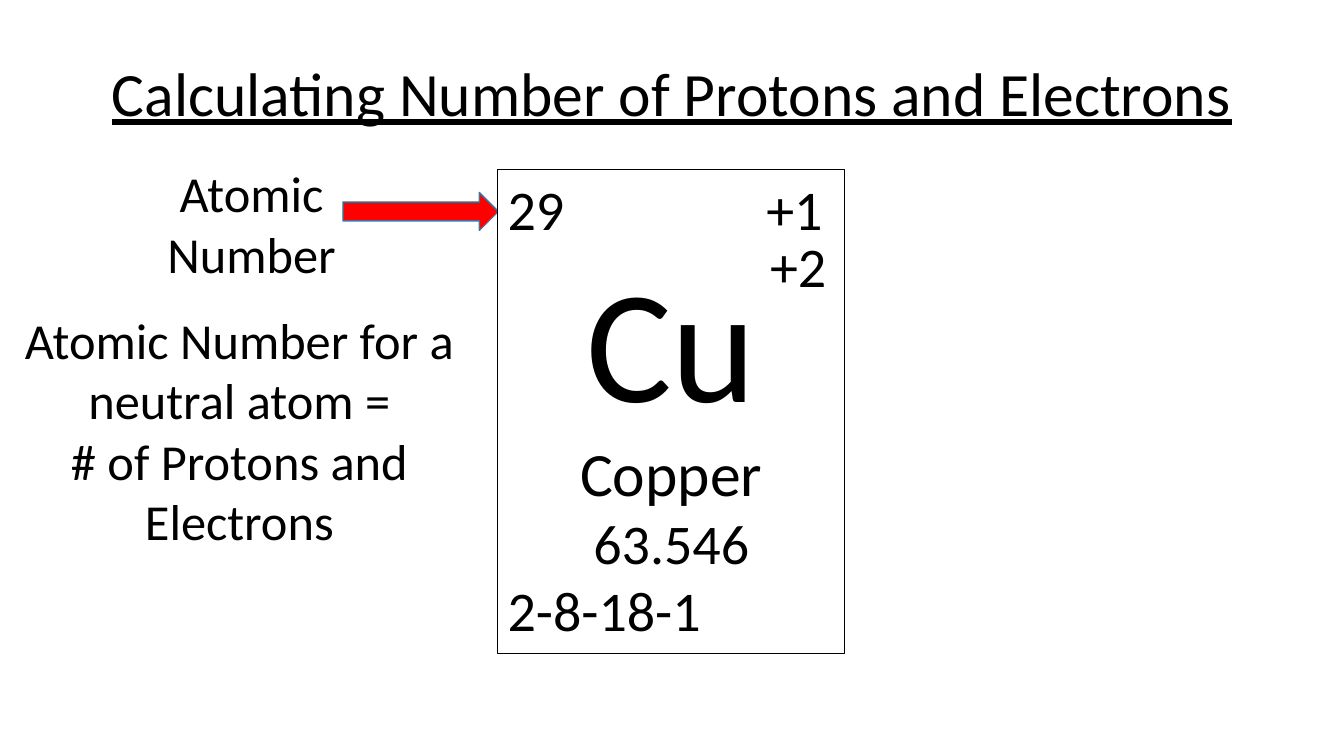
from lxml import etree
from pptx import Presentation
from pptx.dml.color import RGBColor
from pptx.enum.shapes import MSO_SHAPE
from pptx.enum.text import MSO_ANCHOR, MSO_AUTO_SIZE, PP_ALIGN
from pptx.oxml.ns import qn
from pptx.util import Pt

COLORS = {"text": "000000", "card": "FFFFFF", "arrow": "FF0000", "arrow_line": "43739E"}
LEFT, CENTER = PP_ALIGN.LEFT, PP_ALIGN.CENTER


def write(tf, lines, anchor=MSO_ANCHOR.TOP):
    """Fill a text frame with one paragraph per (text, size, alignment)."""
    tf.word_wrap = True
    tf.auto_size = MSO_AUTO_SIZE.NONE
    tf.vertical_anchor = anchor
    for i, (text, size, align) in enumerate(lines):
        p = tf.add_paragraph() if i else tf.paragraphs[0]
        p.alignment = align
        r = p.add_run()
        r.text = text
        r.font.size = Pt(size)
        r.font.name = "Calibri"
        r.font.color.rgb = RGBColor.from_string(COLORS["text"])


def add_box(kind, left, top, width, height, fill, line, weight):
    sp = s.shapes.add_shape(kind, Pt(left), Pt(top), Pt(width), Pt(height))
    sp.shadow.inherit = False
    sp.fill.solid()
    sp.fill.fore_color.rgb = RGBColor.from_string(COLORS[fill])
    sp.line.color.rgb = RGBColor.from_string(COLORS[line])
    sp.line.width = Pt(weight)
    return sp


prs = Presentation()
prs.slide_width, prs.slide_height = Pt(960), Pt(540)
s = prs.slides.add_slide(prs.slide_layouts[5])

# Title
title = s.shapes.title
title.left, title.top, title.width, title.height = Pt(66), Pt(16.5), Pt(828), Pt(104.5)
write(title.text_frame, [("Calculating Number of Protons and Electrons", 44, CENTER)],
      MSO_ANCHOR.MIDDLE)
p = title.text_frame.paragraphs[0]
p.line_spacing = 0.9
p.runs[0].font.underline = True

# Arrow and element card
add_box(MSO_SHAPE.RIGHT_ARROW, 245, 137.5, 111, 27, "arrow", "arrow_line", 1)
card = add_box(MSO_SHAPE.RECTANGLE, 355.5, 121, 248, 345.5, "card", "text", 0.75)
write(card.text_frame, [
    ("29\t+1", 40, LEFT),
    ("Cu", 115, CENTER),
    ("Copper", 44, CENTER),
    ("63.546", 40, CENTER),
    ("2-8-18-1", 40, LEFT),
])

# Right tab stop that holds the first charge
pPr = card.text_frame.paragraphs[0]._p.get_or_add_pPr()
tabs = etree.SubElement(pPr, qn("a:tabLst"))
etree.SubElement(tabs, qn("a:tab"), pos=str(Pt(225)), algn="r")

# Labels
labels = [
    (90, 112.5, 179.5, 94.5, [("Atomic Number", 36, CENTER)]),
    (0, 217, 342, 181.5, [("Atomic Number for a neutral atom =", 36, CENTER),
                          ("# of Protons and Electrons", 36, CENTER)]),
    (543, 162, 68.5, 55.5, [("+2", 40, LEFT)]),
]
for left, top, width, height, lines in labels:
    sp = s.shapes.add_textbox(Pt(left), Pt(top), Pt(width), Pt(height))
    write(sp.text_frame, lines)

prs.save("out.pptx")
